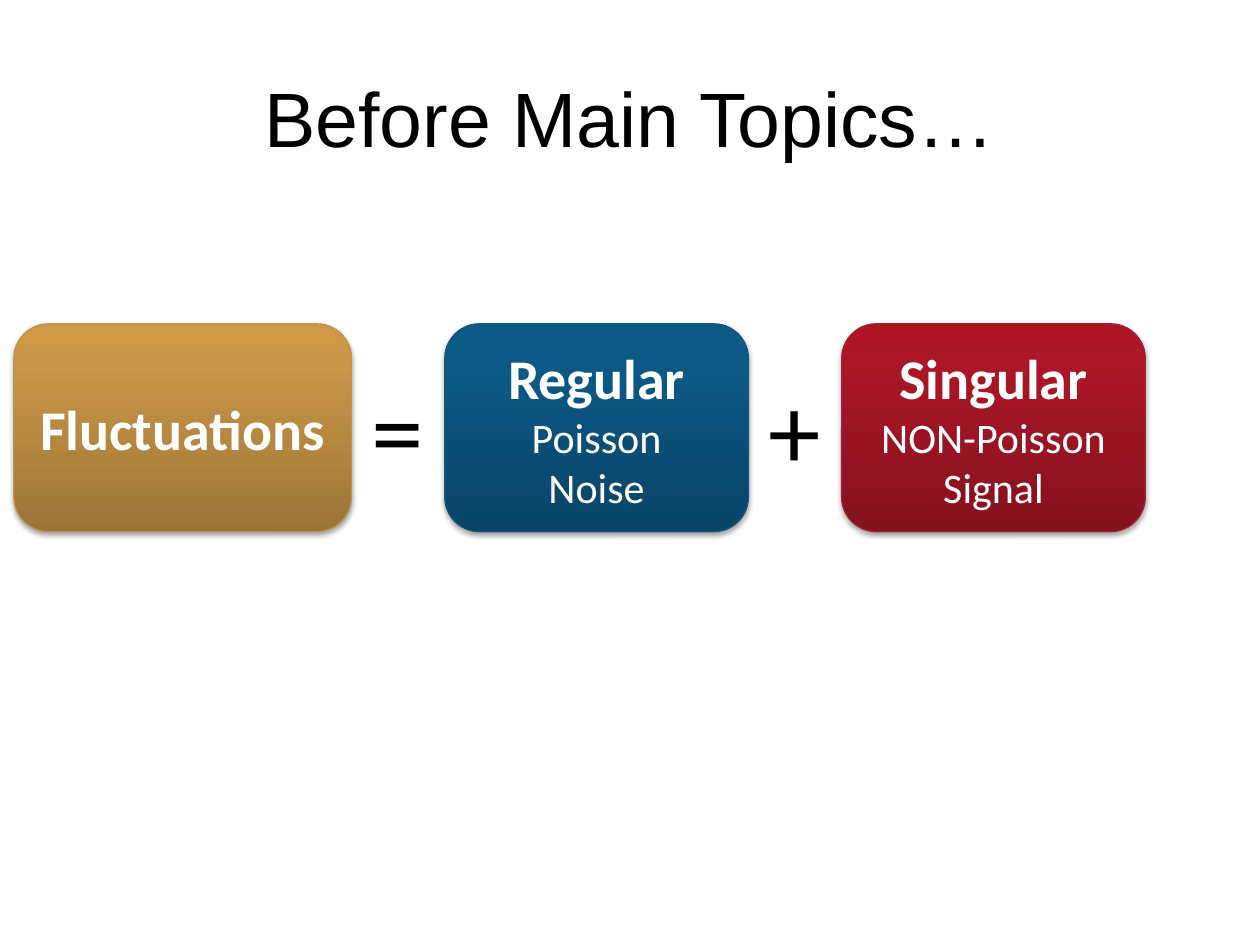
"""Build the slide that splits fluctuations into regular noise and singular signal."""
from copy import deepcopy

from lxml.etree import fromstring
from pptx import Presentation
from pptx.dml.color import RGBColor
from pptx.enum.shapes import MSO_SHAPE
from pptx.enum.text import MSO_ANCHOR, MSO_AUTO_SIZE, PP_ALIGN
from pptx.oxml.ns import qn
from pptx.util import Inches, Pt

BLACK = RGBColor(0x00, 0x00, 0x00)
WHITE = RGBColor(0xFF, 0xFF, 0xFF)
GOLD = [RGBColor(0x9C, 0x74, 0x37), RGBColor(0xCA, 0x96, 0x47), RGBColor(0xCE, 0x98, 0x45)]
BLUE = [RGBColor(0x09, 0x44, 0x67), RGBColor(0x0C, 0x59, 0x86), RGBColor(0x0A, 0x5A, 0x89)]
RED = [RGBColor(0x84, 0x11, 0x1E), RGBColor(0xAB, 0x17, 0x27), RGBColor(0xAF, 0x14, 0x25)]
GOLD_LINE = RGBColor(0xBF, 0x95, 0x54)
BLUE_LINE = RGBColor(0x18, 0x57, 0x7C)
RED_LINE = RGBColor(0x9E, 0x25, 0x33)

SHADOW = (
    '<a:outerShdw xmlns:a="http://schemas.openxmlformats.org/drawingml/2006/main" '
    'blurRad="39370" dist="22860" dir="5400000" rotWithShape="0">'
    '<a:srgbClr val="000000"><a:alpha val="35000"/></a:srgbClr></a:outerShdw>'
)
STOP_POSITIONS = [0, 0.8, 1]
LEFT, GAP = 0.11, 0.74
BOX_TOP, BOX_HEIGHT = 2.57, 1.65
OPERATOR_TOP, OPERATOR_WIDTH, OPERATOR_HEIGHT = 2.84, 0.62, 1.11
TERMS = [
    (2.68, GOLD, GOLD_LINE, ["Fluctuations"], "="),
    (2.41, BLUE, BLUE_LINE, ["Regular", "Poisson", "Noise"], "+"),
    (2.41, RED, RED_LINE, ["Singular", "NON-Poisson", "Signal"], None),
]


def format_paragraph(paragraph, name, size, color, bold=False):
    font = paragraph.runs[0].font
    font.name, font.size, font.bold = name, Pt(size), bold
    font.color.rgb = color


def fill_gradient(shape, colors):
    shape.fill.gradient()
    shape.fill.gradient_angle = 90
    first_stop = shape._element.spPr.find(".//" + qn("a:gs"))
    first_stop.addnext(deepcopy(first_stop))
    for stop, position, color in zip(shape.fill.gradient_stops, STOP_POSITIONS, colors):
        stop.position = position
        stop.color.rgb = color


presentation = Presentation()
presentation.slide_width, presentation.slide_height = Inches(10), Inches(7.5)
slide = presentation.slides.add_slide(presentation.slide_layouts[5])

title = slide.shapes.title
title.left, title.top, title.width, title.height = map(Inches, (0.5, 0.3, 9, 1.25))
title.text_frame.text = "Before Main Topics…"
title.text_frame.vertical_anchor = MSO_ANCHOR.MIDDLE
title.text_frame.paragraphs[0].alignment = PP_ALIGN.CENTER
format_paragraph(title.text_frame.paragraphs[0], "Arial", 44, BLACK)

left = LEFT
for width, colors, line_color, lines, operator in TERMS:
    box = slide.shapes.add_shape(
        MSO_SHAPE.ROUNDED_RECTANGLE,
        Inches(left), Inches(BOX_TOP), Inches(width), Inches(BOX_HEIGHT),
    )
    fill_gradient(box, colors)
    box.line.color.rgb = line_color
    box.line.width = Pt(0.75)
    box.shadow.inherit = False
    box._element.spPr.find(qn("a:effectLst")).append(fromstring(SHADOW))
    box.text_frame.text = "\n".join(lines)
    box.text_frame.vertical_anchor = MSO_ANCHOR.MIDDLE
    for index, paragraph in enumerate(box.text_frame.paragraphs):
        paragraph.alignment = PP_ALIGN.CENTER
        format_paragraph(paragraph, "Calibri", 24 if index else 32, WHITE, bold=index == 0)
    left += width
    if operator:
        sign = slide.shapes.add_textbox(
            Inches(left + (GAP - OPERATOR_WIDTH) / 2), Inches(OPERATOR_TOP),
            Inches(OPERATOR_WIDTH), Inches(OPERATOR_HEIGHT),
        )
        sign.text_frame.text = operator
        sign.text_frame.word_wrap = False
        sign.text_frame.auto_size = MSO_AUTO_SIZE.SHAPE_TO_FIT_TEXT
        format_paragraph(sign.text_frame.paragraphs[0], "Calibri", 60, BLACK)
    left += GAP

presentation.save("out.pptx")
